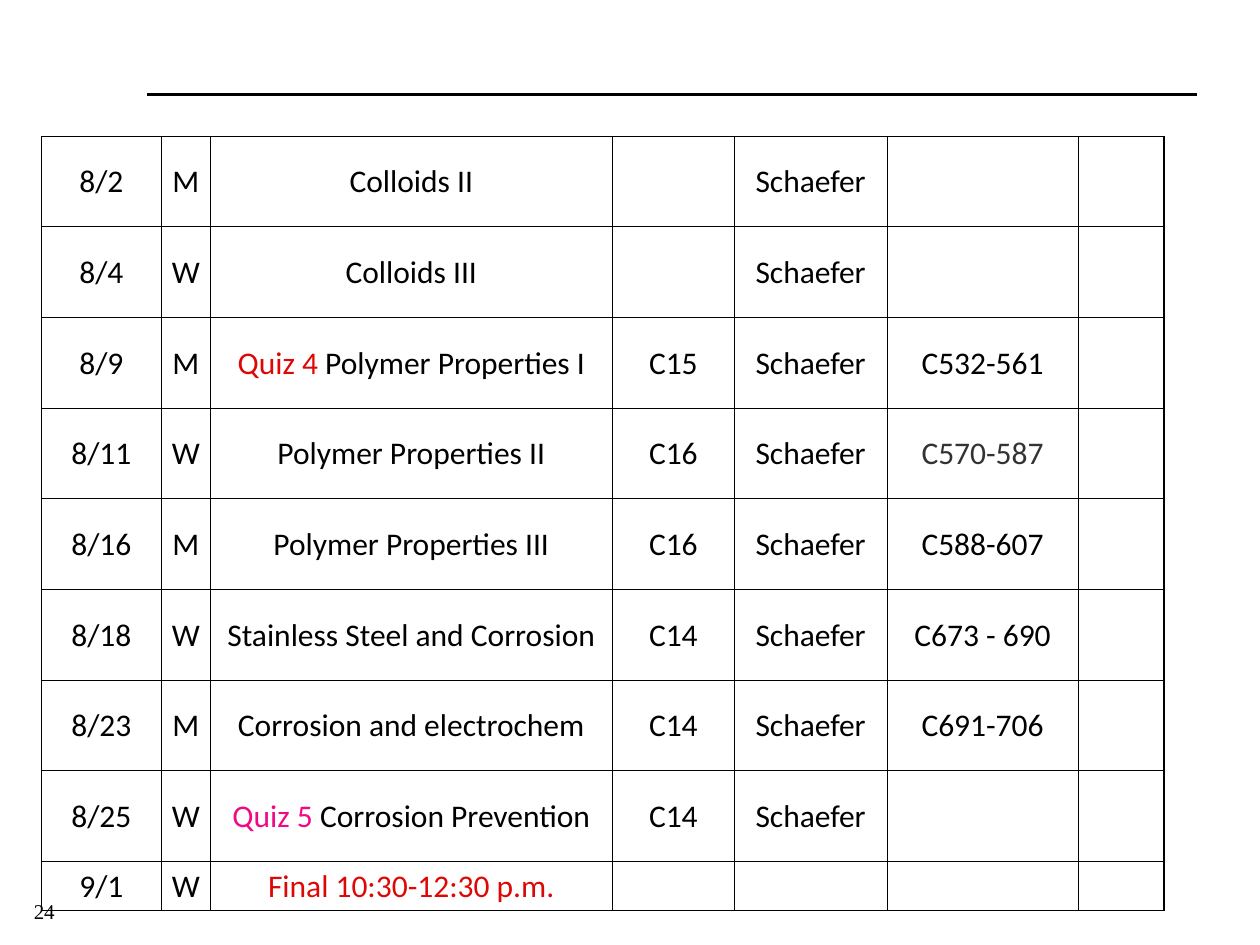
from lxml import etree
from pptx import Presentation
from pptx import util as u
from pptx.dml.color import RGBColor
from pptx.enum import shapes, text
from pptx.oxml import ns

BLACK, RED, PINK, GRAY = "000000", "DD0806", "F20884", "333333"
WIDTHS = [0.95, 0.39, 3.19, 0.97, 1.21, 1.52, 0.68]
HEIGHTS = [0.72] * 8 + [0.39]
NAME = "Schaefer"
ROWS = [
    ["8/2", "M", "Colloids II", "", NAME, "", ""],
    ["8/4", "W", "Colloids III", "", NAME, "", ""],
    ["8/9", "M", [("Quiz 4", RED), (" Polymer Properties I", BLACK)],
     "C15", NAME, "C532-561", ""],
    ["8/11", "W", "Polymer Properties II", "C16", NAME,
     [("C570-587", GRAY)], ""],
    ["8/16", "M", "Polymer Properties III", "C16", NAME, "C588-607", ""],
    ["8/18", "W", "Stainless Steel and Corrosion", "C14", NAME,
     "C673 - 690", ""],
    ["8/23", "M", "Corrosion and electrochem", "C14", NAME, "C691-706", ""],
    ["8/25", "W", [("Quiz 5 ", PINK), ("Corrosion Prevention", BLACK)],
     "C14", NAME, "", ""],
    ["9/1", "W", [("Final 10:30-12:30 p.m.", RED)], "", "", "", ""],
]


def color(code):
    return RGBColor.from_string(code)


def apply(item, style):
    for key, value in style.items():
        setattr(item, key, value)


class Deck:
    body = {"name": "Calibri", "size": u.Pt(18)}
    small = {"name": "Times New Roman", "size": u.Pt(12)}
    inset = {
        "margin_left": u.Inches(0.01),
        "margin_right": u.Inches(0.01),
        "margin_top": u.Inches(0.01),
        "margin_bottom": 0,
        "vertical_anchor": text.MSO_ANCHOR.MIDDLE,
    }

    def __init__(self, wide, high):
        self.show = Presentation()
        self.show.slide_width = u.Inches(wide)
        self.show.slide_height = u.Inches(high)
        self.slide = self.show.slides.add_slide(self.show.slide_layouts[6])

    def words(self, para, parts, style):
        if isinstance(parts, str):
            parts = [(parts, BLACK)] if parts else []
        for part, code in parts:
            run = para.add_run()
            run.text = part
            apply(run.font, style)
            run.font.color.rgb = color(code)

    def rule(self, left, right, top, weight):
        line = self.slide.shapes.add_connector(
            shapes.MSO_CONNECTOR.STRAIGHT,
            *[u.Inches(n) for n in (left, top, right, top)])
        line.line.color.rgb = color(BLACK)
        line.line.width = u.Pt(weight)
        etree.SubElement(line._element.spPr, ns.qn("a:effectLst"))

    def label(self, parts, *place):
        box = self.slide.shapes.add_textbox(*[u.Inches(n) for n in place])
        box.text_frame.word_wrap = False
        self.words(box.text_frame.paragraphs[0], parts, self.small)

    def border(self, cell, sides):
        props = cell._tc.get_or_add_tcPr()
        for spot, (side, weight) in enumerate(sides.items()):
            edge = etree.Element(ns.qn("a:ln" + side), w=str(u.Pt(weight)))
            fill = etree.SubElement(edge, ns.qn("a:solidFill"))
            etree.SubElement(fill, ns.qn("a:srgbClr"), val=BLACK)
            props.insert(spot, edge)

    def table(self, rows, widths, heights, left, top):
        frame = self.slide.shapes.add_table(
            len(rows), len(widths), u.Inches(left), u.Inches(top),
            u.Inches(sum(widths)), u.Inches(sum(heights)))
        grid = frame.table
        apply(grid, {"first_row": False, "horz_banding": False})
        for col, wide in zip(grid.columns, widths):
            col.width = u.Inches(wide)
        for row, high in zip(grid.rows, heights):
            row.height = u.Inches(high)
        for y, row in enumerate(rows):
            for x, parts in enumerate(row):
                cell = grid.cell(y, x)
                apply(cell, self.inset)
                cell.fill.background()
                para = cell.text_frame.paragraphs[0]
                para.alignment = text.PP_ALIGN.CENTER
                self.words(para, parts, self.body)
                self.border(cell, {
                    "L": 0.5,
                    "R": 1 if x == len(widths) - 1 else 0.5,
                    "T": 0.5,
                    "B": 1 if y == len(rows) - 1 else 0.5,
                })


def main():
    deck = Deck(10, 7.5)
    deck.rule(1.17, 9.5, 0.75, 2.25)
    deck.label("24", 0.17, 7.08, 0.4, 0.3)
    deck.table(ROWS, WIDTHS, HEIGHTS, 0.33, 1.08)
    deck.show.save("out.pptx")


if __name__ == "__main__":
    main()
